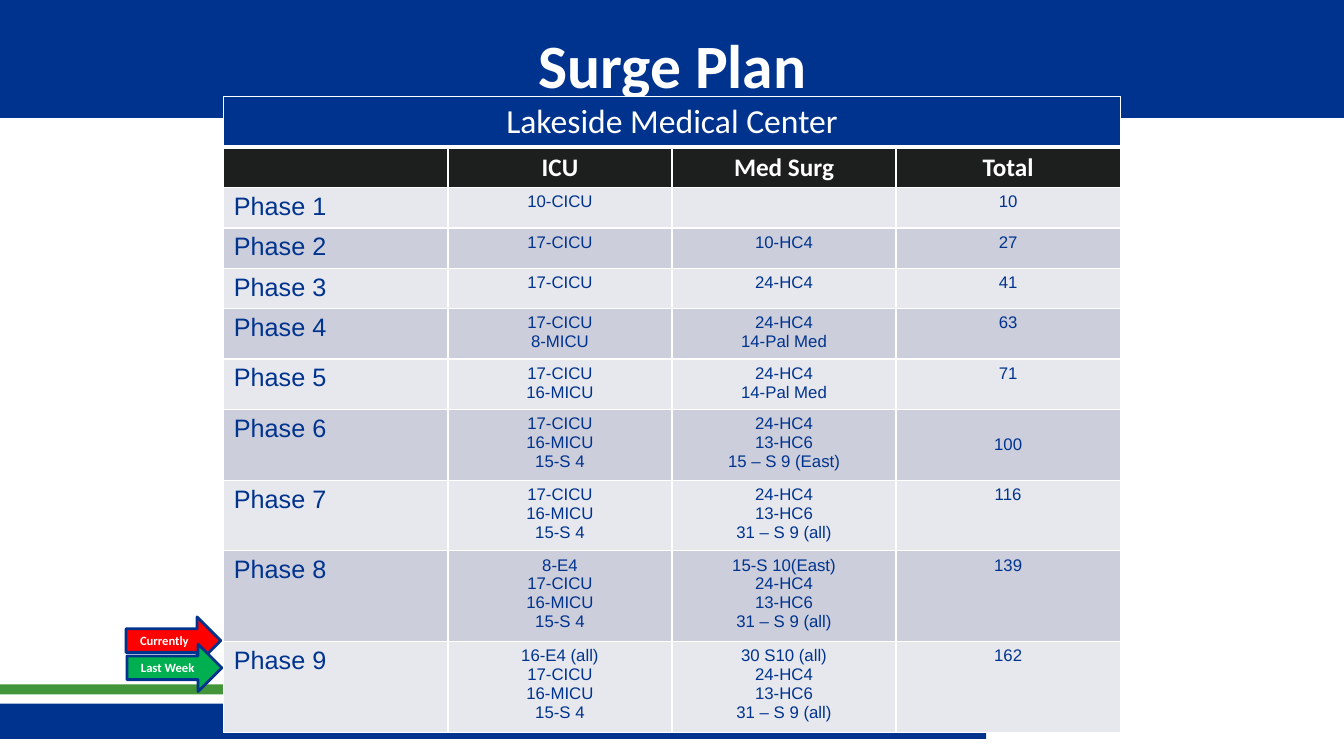
"""Build the hospital surge plan slide with its phase table and markers."""
from dataclasses import dataclass

from lxml.etree import SubElement
from pptx import Presentation
from pptx.dml.color import RGBColor
from pptx.enum.shapes import MSO_SHAPE as Shape
from pptx.enum.text import MSO_ANCHOR as Anchor, PP_ALIGN as Align
from pptx.oxml.ns import qn
from pptx.slide import Slide
from pptx.table import _Cell as Cell
from pptx.util import Inches, Pt

NAVY = RGBColor(0x00, 0x33, 0x8E)
GRASS = RGBColor(0x43, 0x95, 0x39)
WHITE = RGBColor(0xFF, 0xFF, 0xFF)
BLACK = RGBColor(0x1D, 0x1E, 0x1E)
PALE = RGBColor(0xE7, 0xE8, 0xEE)
GREY = RGBColor(0xCC, 0xCE, 0xDB)
RED = RGBColor(0xFF, 0x00, 0x00)
GREEN = RGBColor(0x00, 0xB0, 0x50)


@dataclass
class Bar:
    left: float
    top: float
    width: float
    height: float
    color: RGBColor


@dataclass
class Phase:
    icu: list[str]
    med_surg: list[str]
    total: int
    total_anchor: Anchor = Anchor.TOP


@dataclass
class Marker:
    label: str
    left: float
    top: float
    label_width: float
    color: RGBColor


@dataclass
class Style:
    size: int
    color: RGBColor
    font: str = "Calibri"
    bold: bool = False
    align: Align = Align.CENTER


TITLE = Style(44, WHITE, bold=True)
CENTER_NAME = Style(24, WHITE)
HEADING = Style(18, WHITE, bold=True)
PHASE_NAME = Style(18, NAVY, "Arial", align=Align.LEFT)
BEDS = Style(12, NAVY, "Arial")
MARKER_LABEL = Style(9, WHITE, bold=True, align=Align.LEFT)

BARS = [
    Bar(-0.03, 6.98, 9.81, 0.35, NAVY),
    Bar(-0.03, 6.79, 9.81, 0.1, GRASS),
    Bar(0, 0, 13.33, 1.17, NAVY),
]
HEADINGS = ["", "ICU", "Med Surg", "Total"]
PHASES = [
    Phase(["10-CICU"], [], 10),
    Phase(["17-CICU"], ["10-HC4"], 27),
    Phase(["17-CICU"], ["24-HC4"], 41),
    Phase(["17-CICU", "8-MICU"], ["24-HC4", "14-Pal Med"], 63),
    Phase(["17-CICU", "16-MICU"], ["24-HC4", "14-Pal Med"], 71),
    Phase(["17-CICU", "16-MICU", "15-S 4"],
          ["24-HC4", "13-HC6", "15 – S 9 (East)"], 100, Anchor.MIDDLE),
    Phase(["17-CICU", "16-MICU", "15-S 4"],
          ["24-HC4", "13-HC6", "31 – S 9 (all)"], 116),
    Phase(["8-E4", "17-CICU", "16-MICU", "15-S 4"],
          ["15-S 10(East)", "24-HC4", "13-HC6", "31 – S 9 (all)"], 139),
    Phase(["16-E4 (all)", "17-CICU", "16-MICU", "15-S 4"],
          ["30 S10 (all)", "24-HC4", "13-HC6", "31 – S 9 (all)"], 162),
]
MARKERS = [
    Marker("Currently", 1.25, 6.12, 0.69, RED),
    Marker("Last Week", 1.26, 6.39, 0.74, GREEN),
]


def write(frame, lines: list[str], style: Style) -> None:
    """Put one paragraph per line into a text frame."""
    frame.text = "\n".join(lines)
    for para in frame.paragraphs:
        para.alignment = style.align
        para.font.name = style.font
        para.font.size = Pt(style.size)
        para.font.bold = style.bold
        para.font.color.rgb = style.color


def add_text(page: Slide, left: float, top: float, width: float, height: float,
             text: str, style: Style, wrap: bool) -> None:
    """Add a vertically centred text box."""
    box = page.shapes.add_textbox(
        Inches(left), Inches(top), Inches(width), Inches(height))
    box.text_frame.word_wrap = wrap
    box.text_frame.vertical_anchor = Anchor.MIDDLE
    write(box.text_frame, [text], style)


def add_bar(page: Slide, bar: Bar) -> None:
    """Add a plain background bar."""
    shape = page.shapes.add_shape(
        Shape.RECTANGLE, Inches(bar.left), Inches(bar.top),
        Inches(bar.width), Inches(bar.height))
    shape.shadow.inherit = False
    shape.fill.solid()
    shape.fill.fore_color.rgb = bar.color
    shape.line.fill.background()


def fill_cell(cell: Cell, lines: list[str], style: Style, fill: RGBColor,
              bottom: int = 1) -> None:
    """Write a cell with white borders and a solid fill."""
    write(cell.text_frame, lines, style)
    properties = cell._tc.get_or_add_tcPr()
    for side, width in (("L", 1), ("R", 1), ("T", 1), ("B", bottom)):
        line = SubElement(properties, qn(f"a:ln{side}"), w=str(Pt(width)))
        paint = SubElement(line, qn("a:solidFill"))
        SubElement(paint, qn("a:srgbClr"), val=str(WHITE))
    cell.fill.solid()
    cell.fill.fore_color.rgb = fill


def add_plan(page: Slide) -> None:
    """Add the table of phases."""
    table = page.shapes.add_table(
        len(PHASES) + 2, len(HEADINGS), Inches(2.22), Inches(0.96),
        Inches(8.89), Inches(6.23)).table
    table.rows[0].height = Inches(0.49)
    table.rows[1].height = Inches(0.4)
    for column, heading in enumerate(HEADINGS):
        name = [] if column else ["Lakeside Medical Center"]
        fill_cell(table.cell(0, column), name, CENTER_NAME, NAVY, 3)
        fill_cell(table.cell(1, column), [heading], HEADING, BLACK)
    table.cell(0, 0).merge(table.cell(0, len(HEADINGS) - 1))

    for number, phase in enumerate(PHASES, 1):
        row = number + 1
        fill = PALE if number % 2 else GREY
        table.rows[row].height = Inches(max(0.4, 0.2 * len(phase.icu) + 0.09))
        fill_cell(table.cell(row, 0), [f"Phase {number}"], PHASE_NAME, fill)
        columns = (phase.icu, phase.med_surg, [str(phase.total)])
        for column, lines in enumerate(columns, 1):
            fill_cell(table.cell(row, column), lines, BEDS, fill)
        table.cell(row, 3).vertical_anchor = phase.total_anchor


def add_marker(page: Slide, marker: Marker) -> None:
    """Add a labelled arrow pointing at the table."""
    arrow = page.shapes.add_shape(
        Shape.RIGHT_ARROW, Inches(marker.left), Inches(marker.top),
        Inches(0.94), Inches(0.47))
    arrow.shadow.inherit = False
    arrow.fill.solid()
    arrow.fill.fore_color.rgb = marker.color
    arrow.line.color.rgb = NAVY
    arrow.line.width = Pt(2)
    add_text(page, marker.left + 0.04, marker.top + 0.11, marker.label_width,
             0.25, marker.label, MARKER_LABEL, wrap=False)


def main() -> None:
    """Build and save the deck."""
    deck = Presentation()
    deck.slide_width = Inches(13.33)
    deck.slide_height = Inches(7.5)
    page = deck.slides.add_slide(deck.slide_layouts[6])
    for bar in BARS:
        add_bar(page, bar)
    add_text(page, 0.67, 0.17, 12, 0.92, "Surge Plan", TITLE, wrap=True)
    add_plan(page)
    for marker in MARKERS:
        add_marker(page, marker)
    deck.save("out.pptx")


if __name__ == "__main__":
    main()
